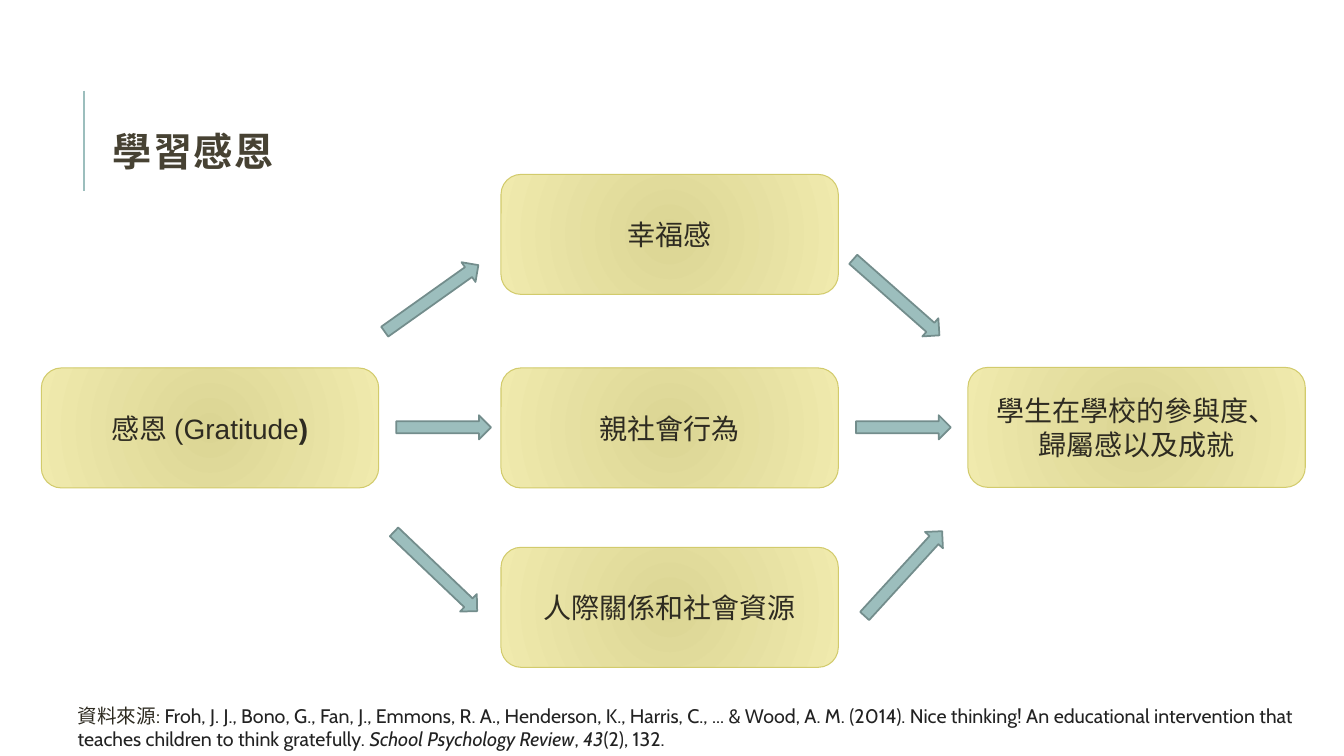
from lxml.etree import SubElement
from pptx import Presentation
from pptx.dml.color import RGBColor
from pptx.enum.shapes import MSO_CONNECTOR as Connector, MSO_SHAPE as Shape
from pptx.enum.text import MSO_ANCHOR as Anchor, PP_ALIGN as Align
from pptx.oxml.ns import qn
from pptx.util import Inches, Pt

INK = RGBColor(0x2E, 0x2B, 0x21)
CITATION_INK = RGBColor(0x22, 0x22, 0x22)
TITLE_INK = RGBColor(0x47, 0x42, 0x33)
SAND = RGBColor(0xDB, 0xD5, 0x94)
CREAM = RGBColor(0xF0, 0xEA, 0xAD)
OLIVE = RGBColor(0xD2, 0xCB, 0x6C)
TEAL = RGBColor(0x9C, 0xBE, 0xBD)
DARK_TEAL = RGBColor(0x73, 0x8D, 0x8C)

TITLE_FONT = {"name": "Calibri", "size": Pt(28), "bold": True}
BOX_FONT = {"name": "Arial", "size": Pt(20)}
SOURCE_FONT = {"name": "Cabin", "size": Pt(14)}


def apply(target, formats):
    for attribute, value in formats.items():
        setattr(target, attribute, value)


class Diagram:
    COLUMNS = ROWS = 100
    BOX_WIDTH, BOX_HEIGHT = 25.1, 15.87
    ARROW_THICKNESS = 3.2

    def __init__(self, deck):
        self.width, self.height = deck.slide_width, deck.slide_height
        self.slide = deck.slides.add_slide(deck.slide_layouts[5])
        self.shapes = self.slide.shapes

    def x(self, columns):
        return round(self.width * columns / self.COLUMNS)

    def y(self, rows):
        return round(self.height * rows / self.ROWS)

    def area(self, left, top, width, height):
        return self.x(left), self.y(top), self.x(width), self.y(height)

    def add_text(self, paragraph, text, font, color, **extra):
        run = paragraph.add_run()
        run.text = text
        apply(run.font, {**font, **extra})
        run.font.color.rgb = color
        return run

    def title(self, text, left, top, width, height):
        heading = self.shapes.title
        names = ("left", "top", "width", "height")
        apply(heading, dict(zip(names, self.area(left, top, width, height))))
        frame = heading.text_frame
        apply(frame, {"margin_left": 0, "margin_right": 0, "margin_top": 0,
                      "margin_bottom": Inches(-0.07), "word_wrap": False,
                      "vertical_anchor": Anchor.MIDDLE})
        frame.paragraphs[0].alignment = Align.LEFT
        run = self.add_text(frame.paragraphs[0], text, TITLE_FONT, TITLE_INK)
        run._r.get_or_add_rPr().set("spc", "100")

    def rule(self, column, top, bottom):
        line = self.shapes.add_connector(
            Connector.STRAIGHT, self.x(column), self.y(top), self.x(column), self.y(bottom))
        line.line.color.rgb = TEAL
        line.line.width = Pt(1.5)
        SubElement(line._element.spPr, qn("a:effectLst"))

    def outline(self, shape, color, width):
        shape.shadow.inherit = False
        shape.line.color.rgb = color
        shape.line.width = Pt(width)

    def glow(self, shape):
        shape.fill.gradient()
        for position, (stop, color) in enumerate(
                zip(shape.fill.gradient_stops, (SAND, CREAM))):
            stop.color.rgb = color
            stop.position = position
        gradient = shape._element.spPr.find(qn("a:gradFill"))
        gradient.remove(gradient.find(qn("a:lin")))
        circle = SubElement(gradient, qn("a:path"), {"path": "circle"})
        SubElement(circle, qn("a:fillToRect"), dict.fromkeys("ltrb", "100000"))

    def box(self, left, top, *pieces):
        box = self.shapes.add_shape(
            Shape.ROUNDED_RECTANGLE,
            *self.area(left, top, self.BOX_WIDTH, self.BOX_HEIGHT))
        self.glow(box)
        self.outline(box, OLIVE, 0.75)
        apply(box.text_frame, {"word_wrap": True, "vertical_anchor": Anchor.MIDDLE})
        paragraph = box.text_frame.paragraphs[0]
        paragraph.alignment = Align.CENTER
        for text, bold in pieces:
            self.add_text(paragraph, text, BOX_FONT, INK, bold=bold)

    def arrow(self, center, middle, length, angle):
        arrow = self.shapes.add_shape(
            Shape.RIGHT_ARROW,
            *self.area(center - length / 2, middle - self.ARROW_THICKNESS / 2,
                       length, self.ARROW_THICKNESS))
        arrow.rotation = angle
        arrow.fill.solid()
        arrow.fill.fore_color.rgb = TEAL
        self.outline(arrow, DARK_TEAL, 1.25)

    def source(self, left, top, width, height, label, lines):
        note = self.shapes.add_textbox(*self.area(left, top, width, height))
        note.text_frame.word_wrap = True
        paragraph = note.text_frame.paragraphs[0]
        self.add_text(paragraph, label, SOURCE_FONT, INK)
        for number, line in enumerate(lines):
            if number:
                paragraph.add_line_break()
            for text, italic in line:
                self.add_text(paragraph, text, SOURCE_FONT, CITATION_INK, italic=italic)


def main():
    deck = Presentation()
    deck.slide_width, deck.slide_height = Inches(13.33), Inches(7.5)
    diagram = Diagram(deck)

    diagram.rule(6.23, 12, 25.33)
    diagram.title("學習感恩", 8.4, 16.8, 12.98, 5.33)

    diagram.box(3.08, 48.67, ("感恩 (Gratitude", False), (")", True))
    outcomes = {23.07: "幸福感", 48.67: "親社會行為", 72.4: "人際關係和社會資源"}
    for top, outcome in outcomes.items():
        diagram.box(37.28, top, (outcome, False))
    diagram.box(72.02, 48.6, ("學生在學校的參與度、歸屬感以及成就", False))

    level, slanted = 7.05, 8.55
    for arrow in (
        (33.01, 56.53, level, 0),
        (32.11, 39.47, slanted, 324.6),
        (32.41, 75.6, slanted, 43.6),
        (67.22, 56.53, level, 0),
        (66.69, 39.33, slanted, 41.4),
        (67.22, 75.87, slanted, 312.4),
    ):
        diagram.arrow(*arrow)

    diagram.source(5.03, 92.4, 94.97, 7.6, "資料來源: ", [
        [("Froh, J. J., Bono, G., Fan, J., Emmons, R. A., Henderson, K., Harris, C., ... "
          "& Wood, A. M. (2014). Nice thinking! An educational intervention that ", False)],
        [("teaches children to think gratefully. ", False),
         ("School Psychology Review", True), (", ", False),
         ("43", True), ("(2), 132.", False)],
    ])
    deck.save("out.pptx")


if __name__ == "__main__":
    main()
